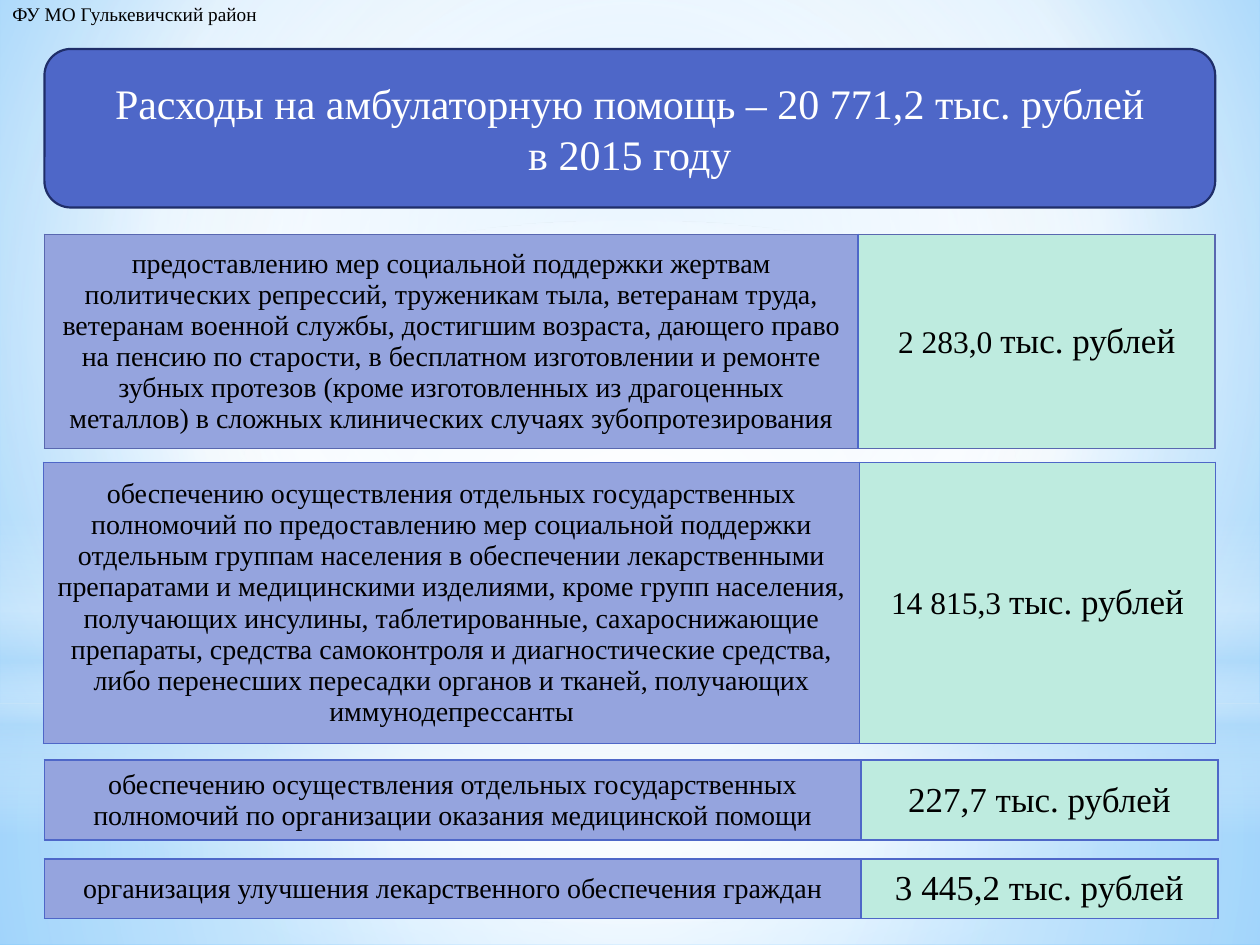
from lxml.etree import SubElement
from pptx import Presentation
from pptx.dml.color import RGBColor
from pptx.enum.shapes import MSO_SHAPE as Shape
from pptx.enum.text import MSO_ANCHOR as Anchor, PP_ALIGN as Align
from pptx.oxml import parse_xml
from pptx.oxml.ns import nsdecls, qn
from pptx.util import Pt

FONT = "Times New Roman"
BLUE, DARK_BLUE, LILAC, MINT = "4E67C8", "5968B0", "95A4DE", "BEEBDF"


def set_gradient(fill, owner, stops, direction):
    """Stops are (position, colour, opacity); direction is an angle or a focus rectangle l, t, r, b."""
    fill.gradient()
    gradient = next(owner.iter(qn("a:gradFill")))
    for child in list(gradient):
        gradient.remove(child)
    stop_list = SubElement(gradient, qn("a:gsLst"))
    for position, colour, opacity in stops:
        stop = SubElement(stop_list, qn("a:gs"), pos=str(position * 1000))
        tint = SubElement(stop, qn("a:srgbClr"), val=colour)
        SubElement(tint, qn("a:alpha"), val=str(opacity * 1000))
    if isinstance(direction, int):
        SubElement(gradient, qn("a:lin"), ang=str(direction * 60000), scaled="0")
    else:
        focus = SubElement(gradient, qn("a:path"), path="circle")
        sides = {side: str(value * 1000) for side, value in zip("ltrb", direction)}
        SubElement(focus, qn("a:fillToRect"), **sides)


def add_run(paragraph, text, size, colour="000000"):
    run = paragraph.add_run()
    run.text = text
    run.font.name, run.font.size = FONT, Pt(size)
    run.font.color.rgb = RGBColor.from_string(colour)


presentation = Presentation()
presentation.slide_width, presentation.slide_height = Pt(720), Pt(540)
slide = presentation.slides.add_slide(presentation.slide_layouts[6])

# Sky background: a base gradient under four translucent layers
set_gradient(slide.background.fill, slide._element,
             [(0, "9ED5FF", 100), (60, "FFFFFF", 100), (100, "5BB9FF", 100)],
             (20, 10, 20, 60))
CENTRE = (50, 50, 50, 50)
layers = [
    (Shape.RECTANGLE, 401.8, 138.2, CENTRE,
     [(0, "FFFFFF", 91), (37, "FFFFFF", 76), (100, "B4DCFA", 79)]),
    (Shape.RECTANGLE, 0, 401.8, CENTRE,
     [(0, "FFFFFF", 89), (48, "FFFFFF", 62), (100, "B4DCFA", 79)]),
    (Shape.RECTANGLE, 296.6, 180, 90,
     [(0, "FFFFFF", 0), (29, "FFFFFF", 30), (45, "B4DCFA", 40),
      (55, "FFFFFF", 26), (65, "B4DCFA", 60), (100, "FFFFFF", 0)]),
    (Shape.OVAL, 126, 401.8, CENTRE, [(0, "FFFFFF", 100), (56, "FFFFFF", 0)]),
]
for kind, top, height, direction, stops in layers:
    layer = slide.shapes.add_shape(kind, 0, Pt(top), Pt(720), Pt(height))
    layer.shadow.inherit = False
    layer.line.fill.background()
    set_gradient(layer.fill, layer._element, stops, direction)

# Department name
department = slide.shapes.add_textbox(0, Pt(-2), Pt(157), Pt(21))
department.text_frame.word_wrap = False
add_run(department.text_frame.paragraphs[0], "ФУ МО Гулькевичский район", 11)

# Title
title = slide.shapes.add_shape(Shape.ROUNDED_RECTANGLE, Pt(25.4), Pt(28), Pt(669), Pt(90.6))
title.shadow.inherit = False
title.fill.solid()
title.fill.fore_color.rgb = RGBColor.from_string(BLUE)
title.line.color.rgb = RGBColor.from_string("1F2E69")
title.line.width = Pt(1.25)
frame = title.text_frame
frame.word_wrap, frame.vertical_anchor = True, Anchor.MIDDLE
title_lines = ["Расходы на амбулаторную помощь – 20 771,2 тыс. рублей", "в 2015 году"]
for number, line in enumerate(title_lines):
    paragraph = frame.add_paragraph() if number else frame.paragraphs[0]
    paragraph.alignment = Align.CENTER
    add_run(paragraph, line, 24, "FFFFFF")

# Expenses, one table each: left, top, height, column widths, outer border, purpose, sum runs
expenses = [
    (25.4, 134, 122.4, (465, 204), DARK_BLUE,
     "предоставлению мер социальной поддержки жертвам политических репрессий, "
     "труженикам тыла, ветеранам труда, ветеранам военной службы, достигшим возраста, "
     "дающего право на пенсию по старости, в бесплатном изготовлении и ремонте зубных "
     "протезов (кроме изготовленных из драгоценных металлов) в сложных клинических "
     "случаях зубопротезирования",
     [("2 283,0 ", 18), ("тыс. рублей", 20)]),
    (24.8, 264.2, 160.8, (466.4, 203.4), BLUE,
     "обеспечению осуществления отдельных государственных полномочий по предоставлению "
     "мер социальной поддержки отдельным группам населения в обеспечении лекарственными "
     "препаратами и медицинскими изделиями, кроме групп населения, получающих инсулины, "
     "таблетированные, сахароснижающие препараты, средства самоконтроля и диагностические "
     "средства, либо перенесших пересадки органов и тканей, получающих иммунодепрессанты",
     [("14 815,3 ", 18), ("тыс. рублей", 20)]),
    (25.4, 434.4, 45.6, (466.6, 204), BLUE,
     "обеспечению осуществления отдельных государственных полномочий по организации "
     "оказания медицинской помощи",
     [("227,7 тыс. рублей", 20)]),
    (25.4, 491, 34, (466.6, 204), BLUE,
     "организация улучшения лекарственного обеспечения граждан",
     [("3 445,2 тыс. рублей", 20)]),
]
for left, top, height, widths, outer, purpose, amount in expenses:
    table = slide.shapes.add_table(1, 2, Pt(left), Pt(top), Pt(sum(widths)), Pt(height)).table
    table.first_row = table.horz_banding = False
    contents = [([(purpose, 16)], LILAC, (outer, BLUE)), (amount, MINT, (BLUE, outer))]
    for column, (runs, colour, (left_edge, right_edge)) in enumerate(contents):
        table.columns[column].width = Pt(widths[column])
        cell = table.cell(0, column)
        cell.vertical_anchor = Anchor.MIDDLE
        cell.fill.solid()
        cell.fill.fore_color.rgb = RGBColor.from_string(colour)
        paragraph = cell.text_frame.paragraphs[0]
        paragraph.alignment = Align.CENTER
        for text, size in runs:
            add_run(paragraph, text, size)
        properties = cell._tc.get_or_add_tcPr()
        edges = {"L": left_edge, "R": right_edge, "T": outer, "B": outer}
        for order, (side, edge) in enumerate(edges.items()):
            properties.insert(order, parse_xml(
                f'<a:ln{side} {nsdecls("a")} w="{Pt(1)}"><a:solidFill>'
                f'<a:srgbClr val="{edge}"/></a:solidFill></a:ln{side}>'))

presentation.save("out.pptx")
